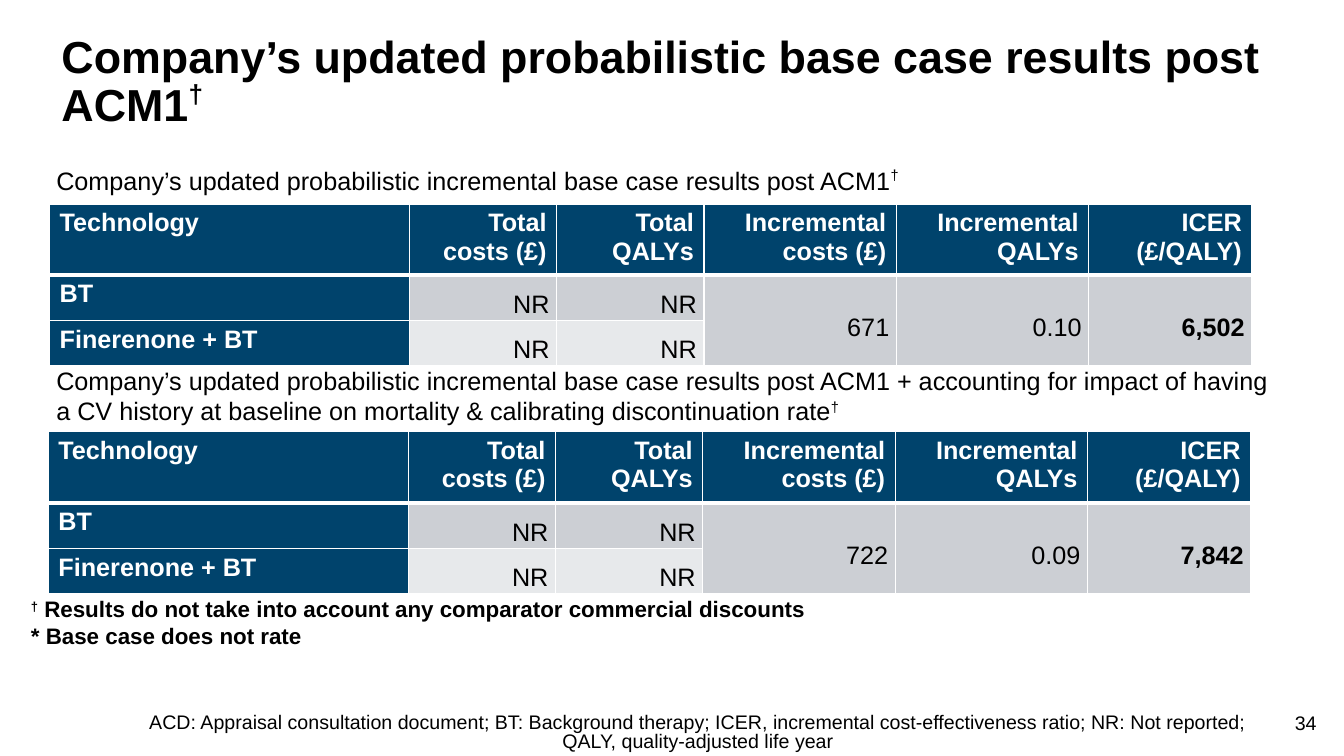
from dataclasses import dataclass

from lxml.etree import SubElement
from pptx import Presentation
from pptx.dml.color import RGBColor as Rgb
from pptx.enum.text import MSO_ANCHOR as Anchor, PP_ALIGN as Align
from pptx.oxml.ns import qn
from pptx.util import Cm, Pt

HEX = {"ink": "000000", "white": "FFFFFF", "navy": "00436C", "grey": "CCCFD4", "pale": "E7E9EB"}
WIDTHS = (9.07, 3.71, 3.71, 4.85, 4.85, 4.11)
HEIGHTS = (1.79, 1.13, 1.13)
HEADS = ("Technology", "Total costs (£)", "Total QALYs", "Incremental costs (£)",
         "Incremental QALYs", "ICER (£/QALY)")
DAGGER = "†"


@dataclass
class Box:
    left: float
    top: float
    width: float
    height: float
    lines: tuple
    size: int
    bold: bool = False
    align: Align = Align.LEFT
    anchor: Anchor = Anchor.TOP
    wrap: bool = True
    lead: float = 1.0
    rise: int = 30


@dataclass
class Result:
    left: float
    top: float
    costs: str
    gain: str
    ratio: str


BOXES = (
    Box(1.3, 0.74, 31.24, 1.65,
        ("Company’s updated probabilistic base case results post ACM1†",),
        32, bold=True, lead=0.9, rise=40),
    Box(1.17, 4.04, 22.1, 1.02,
        ("Company’s updated probabilistic incremental base case results post ACM1†",),
        18, wrap=False, rise=40),
    Box(1.17, 9.07, 31.52, 1.8,
        ("Company’s updated probabilistic incremental base case results post ACM1"
         " + accounting for impact of having",
         "a CV history at baseline on mortality & calibrating discontinuation rate†"),
        18, wrap=False),
    Box(0.53, 14.88, 32.79, 1.63,
        ("† Results do not take into account any comparator commercial discounts",
         "* Base case does not rate"), 16, bold=True),
    Box(3.05, 17.78, 29.08, 1.3,
        ("ACD: Appraisal consultation document; BT: Background therapy; ICER, incremental"
         " cost-effectiveness ratio; NR: Not reported; QALY, quality-adjusted life year",),
        14, align=Align.CENTER, anchor=Anchor.BOTTOM, lead=0.8),
    Box(32.13, 17.78, 1.3, 1.02, ("34",), 14, align=Align.RIGHT),
)
RESULTS = (
    Result(1.25, 5.14, "671", "0.10", "6,502"),
    Result(1.22, 10.88, "722", "0.09", "7,842"),
)


def style(para, size: int, bold: bool, tint: str) -> None:
    for run in para.runs:
        font = run.font
        font.name, font.size, font.bold = "Arial", Pt(size), bold
        font.color.rgb = Rgb.from_string(HEX[tint])


def draw_box(slide, box: Box) -> None:
    frame = slide.shapes.add_textbox(
        Cm(box.left), Cm(box.top), Cm(box.width), Cm(box.height)).text_frame
    frame.word_wrap = box.wrap
    frame.vertical_anchor = box.anchor
    for at, line in enumerate(box.lines):
        para = frame.paragraphs[0] if at == 0 else frame.add_paragraph()
        para.alignment = box.align
        para.line_spacing = box.lead
        for part in line.partition(DAGGER):
            if part:
                run = para.add_run()
                run.text = part
                if part == DAGGER:
                    run.font._element.set("baseline", str(box.rise * 1000))
        style(para, box.size, box.bold, "ink")


def add_edges(cell, row: int) -> None:
    props = cell._tc.get_or_add_tcPr()
    for side in "LRTB":
        thick = (row, side) in ((0, "B"), (1, "T"))
        line = SubElement(props, qn(f"a:ln{side}"), w=str(Pt(3 if thick else 1)))
        fill = SubElement(line, qn("a:solidFill"))
        SubElement(fill, qn("a:srgbClr"), val=HEX["white"])


def draw_cell(cell, text: str, row: int, col: int) -> None:
    label = row == 0 or col == 0
    add_edges(cell, row)
    cell.fill.solid()
    shade = "navy" if label else "grey" if row == 1 else "pale"
    cell.fill.fore_color.rgb = Rgb.from_string(HEX[shade])
    if not text:
        return
    cell.text_frame.text = text
    para = cell.text_frame.paragraphs[0]
    para.alignment = Align.RIGHT if col else Align.LEFT
    if not label:
        cell.vertical_anchor = Anchor.MIDDLE
        cell.margin_left = cell.margin_right = Cm(0.18)
        cell.margin_top = cell.margin_bottom = 0
        para.line_spacing = 1.5
        para.space_after = Pt(10)
    style(para, 18, label or col == 5, "white" if label else "ink")


def draw_table(slide, result: Result) -> None:
    rows = (
        HEADS,
        ("BT", "NR", "NR", result.costs, result.gain, result.ratio),
        ("Finerenone + BT", "NR", "NR", "", "", ""),
    )
    table = slide.shapes.add_table(
        len(HEIGHTS), len(WIDTHS), Cm(result.left), Cm(result.top),
        Cm(sum(WIDTHS)), Cm(sum(HEIGHTS))).table
    for column, width in zip(table.columns, WIDTHS):
        column.width = Cm(width)
    for line, height in zip(table.rows, HEIGHTS):
        line.height = Cm(height)
    for col in range(3, 6):
        table.cell(1, col).merge(table.cell(2, col))
    for row, texts in enumerate(rows):
        for col, text in enumerate(texts):
            draw_cell(table.cell(row, col), text, row, col)


def main() -> None:
    deck = Presentation()
    deck.slide_width, deck.slide_height = Cm(33.87), Cm(19.05)
    slide = deck.slides.add_slide(deck.slide_layouts[6])
    for box in BOXES:
        draw_box(slide, box)
    for result in RESULTS:
        draw_table(slide, result)
    deck.save("out.pptx")


if __name__ == "__main__":
    main()
